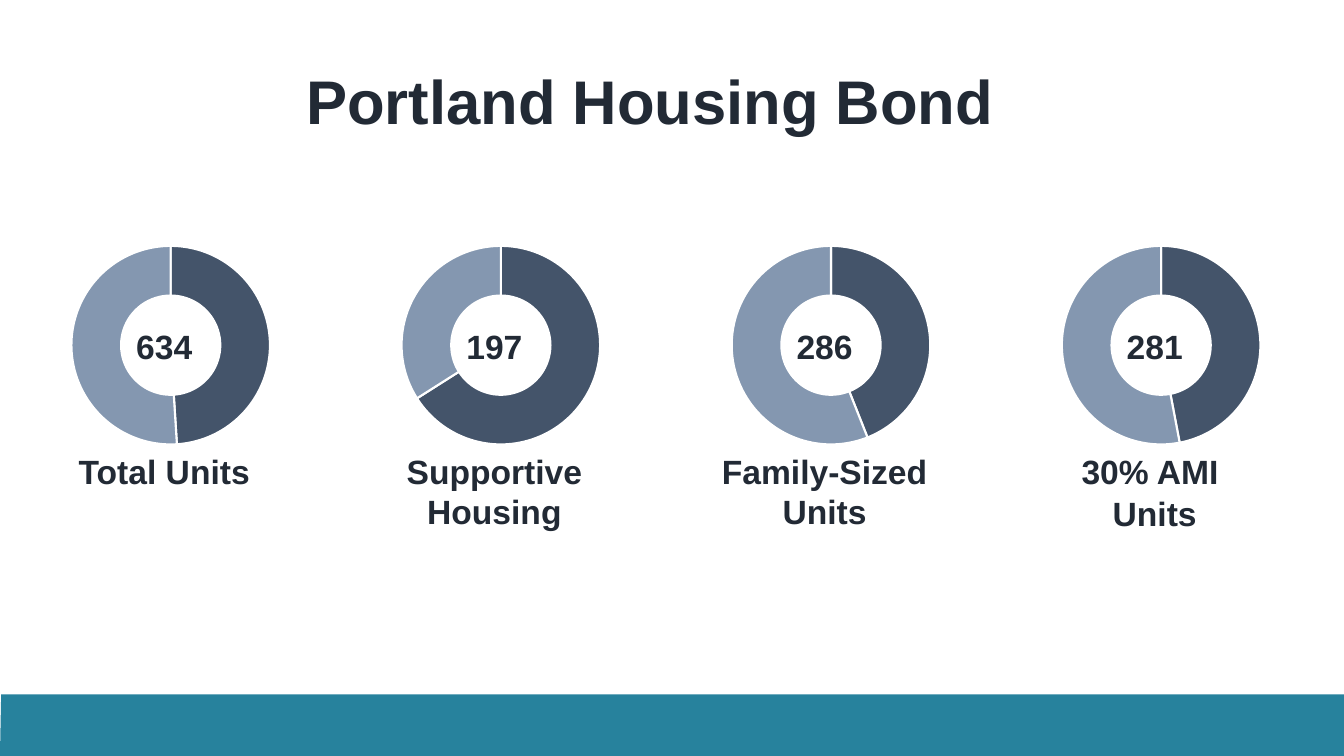
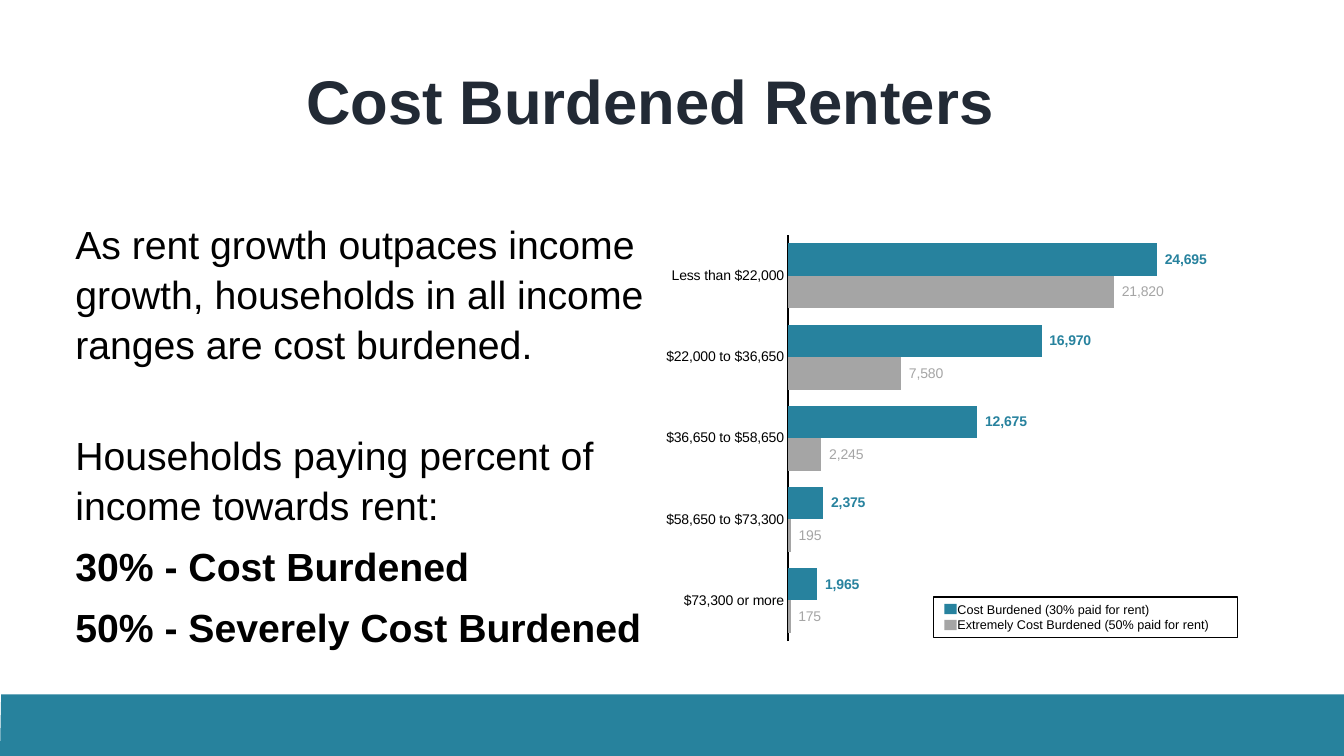
import pptx
import pptx.chart.data
import pptx.dml.color
import pptx.enum.chart
import pptx.enum.shapes
import pptx.enum.text
import pptx.oxml
import pptx.oxml.ns
import pptx.util

Cm = pptx.util.Cm
Pt = pptx.util.Pt
ALIGN = pptx.enum.text.PP_ALIGN
ANCHOR = pptx.enum.text.MSO_ANCHOR

PAGE_WIDTH, PAGE_HEIGHT = 33.87, 19.05
BAND_TOP = 17.5
BAND, TEAL, GRAY = "27829D", "27829E", "A5A5A5"
INK, BLACK, WHITE = "222A35", "000000", "FFFFFF"
SLATE, MIST = "44546A", "8497B0"
COUNT_FORMAT = "_(* #,##0_)"

BONDS = [
    ("634", ["Total Units"], 49),
    ("197", ["Supportive Housing"], 66),
    ("286", ["Family-Sized Units"], 44),
    ("281", ["30% AMI ", "Units"], 47),
]
INCOMES = ["Less than $22,000", "$22,000 to $36,650", "$36,650 to $58,650",
           "$58,650 to $73,300", "$73,300 or more"]
BURDENS = [
    ("Cost Burdened (30% paid for rent)", [24695, 16970, 12675, 2375, 1965], TEAL, True),
    ("Extremely Cost Burdened (50% paid for rent)", [21820, 7580, 2245, 195, 175], GRAY, False),
]


def color(value):
    """Turn a hex string into a colour."""
    return pptx.dml.color.RGBColor.from_string(value)


def paint(item, fill):
    """Fill a shape, chart series or point with a solid colour."""
    item.fill.solid()
    item.fill.fore_color.rgb = color(fill)


def style_font(font, size, ink, bold=False, name="Arial"):
    """Set the face, size, colour and weight of a font."""
    font.name, font.size, font.bold = name, Pt(size), bold
    font.color.rgb = color(ink)


def add_text(page, text, left, top, width, height, size=24, ink=INK, bold=False,
             align=ALIGN.CENTER, anchor=ANCHOR.TOP, insets=(0, 0.03, 0, 0),
             before=1, after=0, spacing=None):
    """Add a text box with one paragraph for each string in the list."""
    box = page.shapes.add_textbox(Cm(left), Cm(top), Cm(width), Cm(height))
    frame = box.text_frame
    frame.word_wrap, frame.vertical_anchor = True, anchor
    (frame.margin_left, frame.margin_top,
     frame.margin_right, frame.margin_bottom) = map(Cm, insets)
    for index, line in enumerate(text):
        para = frame.add_paragraph() if index else frame.paragraphs[0]
        para.alignment, para.line_spacing = align, spacing
        para.space_before, para.space_after = Pt(before), Pt(after)
        span = para.add_run()
        span.text = line
        style_font(span.font, size, ink, bold)
    return box


def add_page(deck, title):
    """Add a blank slide with the bottom band and the centred title."""
    page = deck.slides.add_slide(deck.slide_layouts[6])
    outline = page.shapes.build_freeform(Cm(PAGE_WIDTH), Cm(BAND_TOP))
    corners = [(0.03, BAND_TOP), (0, PAGE_HEIGHT), (PAGE_WIDTH, PAGE_HEIGHT)]
    outline.add_line_segments([(Cm(x), Cm(y)) for x, y in corners])
    band = outline.convert_to_shape()
    band.shadow.inherit = False
    paint(band, BAND)
    band.line.fill.background()
    add_text(page, [title], 1.9, 1.55, 28.98, 1.9, size=44, bold=True,
             anchor=ANCHOR.MIDDLE)
    return page


def add_chart(page, kind, categories, series, left, top, width, height, plot_box, font):
    """Add a bare chart whose plot fills the given fractions of its frame."""
    data = pptx.chart.data.CategoryChartData()
    data.categories = categories
    for name, values in series:
        data.add_series(name, values)
    chart = page.shapes.add_chart(kind, Cm(left), Cm(top), Cm(width), Cm(height), data).chart
    chart.has_legend = chart.has_title = False
    style_font(chart.font, 10, BLACK, name=font)
    area = chart._chartSpace.chart.plotArea
    for old in area.findall(pptx.oxml.ns.qn("c:layout")):
        area.remove(old)
    sizes = "".join(f'<c:{tag} val="{value}"/>' for tag, value in zip("xywh", plot_box))
    area.insert(0, pptx.oxml.parse_xml(
        f'<c:layout {pptx.oxml.ns.nsdecls("c")}><c:manualLayout>'
        '<c:layoutTarget val="inner"/><c:xMode val="edge"/><c:yMode val="edge"/>'
        f'{sizes}</c:manualLayout></c:layout>'))
    return chart


def add_bond_ring(page, left, top, count, label, share):
    """Draw one ring with its count in the middle and its label below."""
    width = 6.5
    chart = add_chart(page, pptx.enum.chart.XL_CHART_TYPE.DOUGHNUT, ["1", "2"],
                      [("Series 1", [share, 100 - share])], left, top, width, 6.12,
                      (0.14, 0, 0.77, 1), "Calibri")
    plot = chart.plots[0]
    plot.has_data_labels = False
    plot._element.find(pptx.oxml.ns.qn("c:holeSize")).set("val", "60")
    for index, fill in enumerate((SLATE, MIST)):
        part = plot.series[0].points[index].format
        paint(part, fill)
        part.line.color.rgb = color(WHITE)
        part.line.width = Pt(1.5)
    add_text(page, label, left, top + 5.69, width, 2.1, bold=True)
    add_text(page, [count], left, top + 2.54, width, 1.07, bold=True)


def add_burden_text(page, left, top, width, height):
    """Write the explanation of cost burden beside the chart."""
    box = add_text(page, [
        "As rent growth outpaces income growth, households in all income ranges are cost burdened.",
        "Households paying percent of income towards rent:",
        "30% - Cost Burdened",
        "50% - Severely Cost Burdened",
    ], left, top, width, height, size=28, ink=BLACK, align=ALIGN.LEFT,
        before=0, after=8, spacing=1.06)
    paragraphs = box.text_frame.paragraphs
    paragraphs[1].space_before = Pt(35.5)
    for para in paragraphs[2:]:
        para.runs[0].font.bold = True


def add_burden_chart(page, left, top, width, height):
    """Draw the bars of burdened renters by income."""
    chart = add_chart(page, pptx.enum.chart.XL_CHART_TYPE.BAR_CLUSTERED, INCOMES,
                      [(f"Series {number}", burden[1])
                       for number, burden in enumerate(BURDENS, 1)],
                      left, top, width, height, (0.21, 0.08, 0.72, 0.86), "Arial")
    plot = chart.plots[0]
    plot.gap_width, plot.overlap, plot.vary_by_categories = 50, 0, False
    incomes, counts = chart.category_axis, chart.value_axis
    incomes.reverse_order = True
    incomes.major_tick_mark = pptx.enum.chart.XL_TICK_MARK.NONE
    incomes.format.line.color.rgb = color(BLACK)
    incomes.format.line.width = Pt(1.25)
    style_font(incomes.tick_labels.font, 10, BLACK)
    counts.visible = counts.has_major_gridlines = False
    counts.minimum_scale, counts.maximum_scale = 0, 30000
    for series, (_, _, fill, bold) in zip(plot.series, BURDENS):
        paint(series.format, fill)
        labels = series.data_labels
        labels.show_value = True
        labels.position = pptx.enum.chart.XL_LABEL_POSITION.OUTSIDE_END
        labels.number_format, labels.number_format_is_linked = COUNT_FORMAT, False
        style_font(labels.font, 10, fill, bold)


def add_burden_legend(page, left, top, width, height):
    """Draw the framed key with one swatch for each kind of burden."""
    frame = add_text(page, [burden[0] for burden in BURDENS], left, top, width, height,
                     size=9, ink=BLACK, align=ALIGN.LEFT,
                     insets=(0.61, 0.13, 0.25, 0.13), before=0)
    frame.line.color.rgb = color(BLACK)
    frame.line.width = Pt(1)
    for index, burden in enumerate(BURDENS):
        swatch = page.shapes.add_shape(
            pptx.enum.shapes.MSO_SHAPE.RECTANGLE, Cm(left + 0.28),
            Cm(top + 0.18 + 0.4 * index), Cm(0.31), Cm(0.26))
        swatch.shadow.inherit = False
        paint(swatch, burden[2])
        swatch.line.fill.background()


def main():
    """Build both slides and save the deck."""
    deck = pptx.Presentation()
    deck.slide_width, deck.slide_height = Cm(PAGE_WIDTH), Cm(PAGE_HEIGHT)
    page = add_page(deck, "Portland Housing Bond")
    for index, bond in enumerate(BONDS):
        add_bond_ring(page, 0.89 + 8.32 * index, 5.64, *bond)
    page = add_page(deck, "Cost Burdened Renters")
    add_burden_text(page, 1.9, 5.46, 14.45, 11.23)
    add_burden_chart(page, 16.56, 4.98, 15.7, 11.89)
    add_burden_legend(page, 23.52, 15.04, 7.67, 1.02)
    deck.save("out.pptx")


if __name__ == "__main__":
    main()
